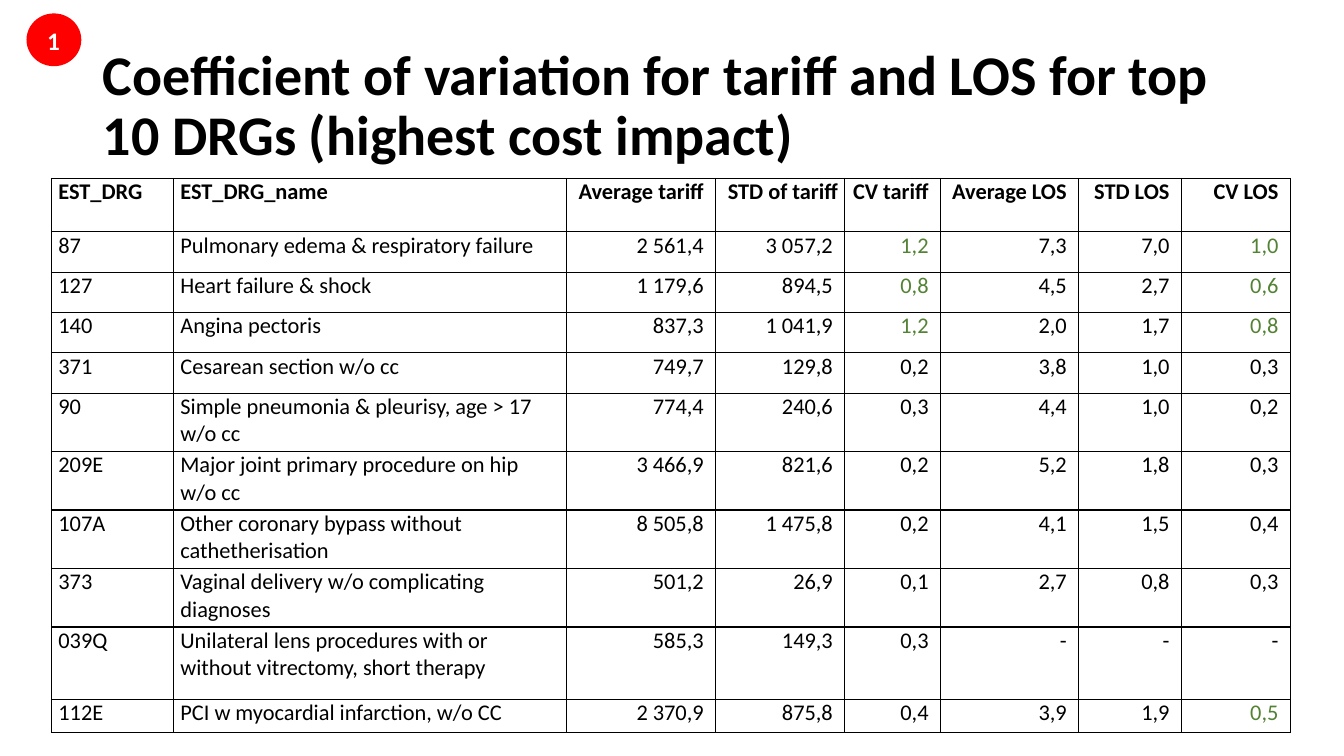
from dataclasses import dataclass

from lxml import etree
from pptx import Presentation
from pptx import util as u
from pptx.dml.color import RGBColor
from pptx.enum import shapes, text
from pptx.oxml import ns


@dataclass(frozen=True)
class Theme:
    font: str = "Calibri"
    ink: str = "000000"
    high: str = "548235"
    badge: str = "FF0000"
    light: str = "FFFFFF"
    title: int = 40
    body: int = 16
    mark: int = 18
    line: int = 1


class Deck:
    def __init__(self, theme):
        self.theme = theme
        self.file = Presentation()
        self.file.slide_width = u.Inches(13.33)
        self.file.slide_height = u.Inches(7.5)
        self.slide = self.file.slides.add_slide(self.file.slide_layouts[6])

    def label(self, frame, words, size, color, bold=False, align=text.PP_ALIGN.LEFT):
        para = frame.paragraphs[0]
        para.text = words
        para.alignment = align
        font = para.font
        font.name, font.size, font.bold = self.theme.font, u.Pt(size), bold
        font.color.rgb = RGBColor.from_string(color)
        return para

    def title(self, words, box):
        frame = self.slide.shapes.add_textbox(*map(u.Inches, box)).text_frame
        frame.word_wrap = True
        frame.vertical_anchor = text.MSO_ANCHOR.MIDDLE
        para = self.label(frame, words, self.theme.title, self.theme.ink, True)
        para.line_spacing = 0.9

    def badge(self, words, disc, box):
        group = self.slide.shapes.add_group_shape().shapes
        dot = group.add_shape(shapes.MSO_SHAPE.OVAL, *map(u.Inches, disc))
        dot.shadow.inherit = False
        dot.fill.solid()
        dot.fill.fore_color.rgb = RGBColor.from_string(self.theme.badge)
        dot.line.color.rgb = RGBColor.from_string(self.theme.badge)
        dot.line.width = u.Pt(self.theme.line)
        frame = group.add_textbox(*map(u.Inches, box)).text_frame
        frame.word_wrap = False
        frame.auto_size = text.MSO_AUTO_SIZE.SHAPE_TO_FIT_TEXT
        self.label(frame, words, self.theme.mark, self.theme.light, True)

    def border(self, cell):
        props = cell._tc.get_or_add_tcPr()
        for spot, side in enumerate(("lnL", "lnR", "lnT", "lnB")):
            line = etree.Element(ns.qn(f"a:{side}"), w=str(u.Pt(self.theme.line)))
            fill = etree.SubElement(line, ns.qn("a:solidFill"))
            etree.SubElement(fill, ns.qn("a:srgbClr"), val=self.theme.ink)
            props.insert(spot, line)

    def cell(self, cell, words, color, bold, right, pad):
        cell.margin_left = u.Inches(0.07)
        cell.margin_right = u.Inches(pad)
        cell.margin_top = cell.margin_bottom = 0
        cell.fill.background()
        self.border(cell)
        align = text.PP_ALIGN.RIGHT if right else text.PP_ALIGN.LEFT
        self.label(cell.text_frame, words, self.theme.body, color, bold, align)

    def table(self, data, box, wide, tall, marked):
        grid = self.slide.shapes.add_table(len(data), len(wide), *map(u.Inches, box)).table
        grid.first_row = grid.horz_banding = False
        for col, size in zip(grid.columns, wide):
            col.width = u.Inches(size)
        for row, size in zip(grid.rows, tall):
            row.height = u.Inches(size)
        for r, row in enumerate(data):
            for c, words in enumerate(row):
                high = r > 0 and marked(c, words)
                color = self.theme.high if high else self.theme.ink
                pad = 0.07 if c < 2 or (r, c) == (0, 3) else 0.12
                self.cell(grid.cell(r, c), words, color, r == 0, c > 1, pad)


def strong(col, words):
    return col in (4, 7) and words != "-" and float(words.replace(",", ".")) >= 0.5


ROWS = [
    ("EST_DRG", "EST_DRG_name", "Average tariff", "STD of tariff",
     "CV tariff", "Average LOS", "STD LOS", "CV LOS"),
    ("87", "Pulmonary edema & respiratory failure",
     "2 561,4", "3 057,2", "1,2", "7,3", "7,0", "1,0"),
    ("127", "Heart failure & shock",
     "1 179,6", "894,5", "0,8", "4,5", "2,7", "0,6"),
    ("140", "Angina pectoris",
     "837,3", "1 041,9", "1,2", "2,0", "1,7", "0,8"),
    ("371", "Cesarean section w/o cc",
     "749,7", "129,8", "0,2", "3,8", "1,0", "0,3"),
    ("90", "Simple pneumonia & pleurisy, age > 17 w/o cc",
     "774,4", "240,6", "0,3", "4,4", "1,0", "0,2"),
    ("209E", "Major joint primary procedure on hip w/o cc",
     "3 466,9", "821,6", "0,2", "5,2", "1,8", "0,3"),
    ("107A", "Other coronary bypass without cathetherisation",
     "8 505,8", "1 475,8", "0,2", "4,1", "1,5", "0,4"),
    ("373", "Vaginal delivery w/o complicating diagnoses",
     "501,2", "26,9", "0,1", "2,7", "0,8", "0,3"),
    ("039Q", "Unilateral lens procedures with or without vitrectomy, short therapy",
     "585,3", "149,3", "0,3", "-", "-", "-"),
    ("112E", "PCI w myocardial infarction, w/o CC",
     "2 370,9", "875,8", "0,4", "3,9", "1,9", "0,5"),
]
WIDE = [1.21, 3.9, 1.48, 1.28, 0.95, 1.37, 1.02, 1.08]
TALL = [0.53] + [0.4] * 4 + [0.58] * 4 + [0.72, 0.33]


def main():
    deck = Deck(Theme())
    deck.title("Coefficient of variation for tariff and LOS for top 10 DRGs (highest cost impact)",
               (0.92, 0.34, 11.75, 1.45))
    deck.table(ROWS, (0.51, 1.77, 12.29, 5.47), WIDE, TALL, strong)
    deck.badge("1", (0.27, 0.14, 0.53, 0.51), (0.37, 0.2, 0.33, 0.4))
    deck.file.save("out.pptx")


if __name__ == "__main__":
    main()
